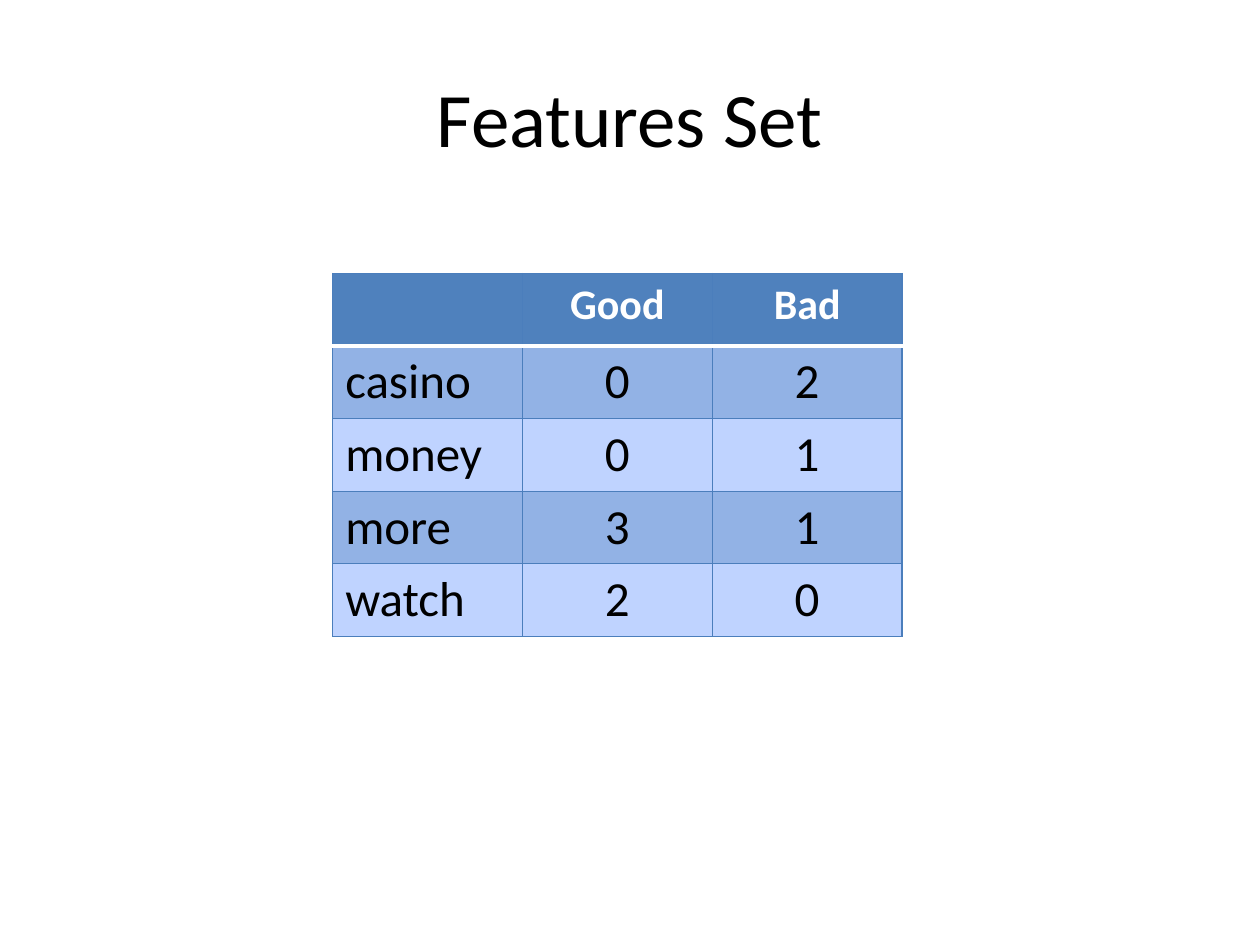
from pptx import Presentation
from pptx.dml.color import RGBColor
from pptx.enum.text import MSO_ANCHOR as Anchor, PP_ALIGN as Align
from pptx.oxml.ns import qn
from pptx.util import Inches, Pt
from lxml.etree import SubElement


def rgb(value):
    return RGBColor.from_string(value)


def set_text(tf, text, size=28, color="000000", bold=False, align=Align.CENTER):
    p = tf.paragraphs[0]
    p.alignment = align
    p.font.size = Pt(size)
    if text:
        r = p.add_run()
        r.text = text
        r.font.name = "Calibri"
        r.font.size = Pt(size)
        r.font.bold = bold
        r.font.color.rgb = rgb(color)


class Deck:
    HEADER, DARK_BAND, LIGHT_BAND = "4F81BD", "92B2E5", "BFD3FF"
    GRID, WHITE = "4B7EBC", "FFFFFF"

    def __init__(self, prs):
        self.s = prs.slides.add_slide(prs.slide_layouts[5])

    def title(self, text, left, top, width, height):
        sp = self.s.shapes.title
        sp.left, sp.top = Inches(left), Inches(top)
        sp.width, sp.height = Inches(width), Inches(height)
        sp.text_frame.vertical_anchor = Anchor.MIDDLE
        set_text(sp.text_frame, text, size=44)

    def border(self, cell, side, color, width):
        line = SubElement(cell._tc.get_or_add_tcPr(), qn(f"a:ln{side}"), w=str(Pt(width)))
        fill = SubElement(line, qn("a:solidFill"))
        SubElement(fill, qn("a:srgbClr"), val=color)

    def cell(self, cell, text, row, col):
        # The rule under the header is shared by the first two rows
        for side in "LRTB":
            under_header = (row, side) in ((0, "B"), (1, "T"))
            color, width = (self.WHITE, 2) if under_header else (self.GRID, 0.75)
            self.border(cell, side, color, width)
        cell.fill.solid()
        if row == 0:
            cell.fill.fore_color.rgb = rgb(self.HEADER)
            set_text(cell.text_frame, text, size=24, color=self.WHITE, bold=True)
        else:
            cell.fill.fore_color.rgb = rgb(self.DARK_BAND if row % 2 else self.LIGHT_BAND)
            set_text(cell.text_frame, text, align=Align.CENTER if col else Align.LEFT)

    def table(self, rows, left, top, width, height):
        frame = self.s.shapes.add_table(len(rows), len(rows[0]), Inches(left),
                                        Inches(top), Inches(width), Inches(height))
        for i, row in enumerate(rows):
            for j, text in enumerate(row):
                self.cell(frame.table.cell(i, j), text, i, j)


prs = Presentation()
prs.slide_width, prs.slide_height = Inches(10), Inches(7.5)
deck = Deck(prs)

# Title
deck.title("Features Set", 0.5, 0.3, 9, 1.25)

# Word counts by class
deck.table([
    ("", "Good", "Bad"),
    ("casino", "0", "2"),
    ("money", "0", "1"),
    ("more", "3", "1"),
    ("watch", "2", "0"),
], 2.64, 2.17, 4.52, 2.88)

prs.save("out.pptx")
